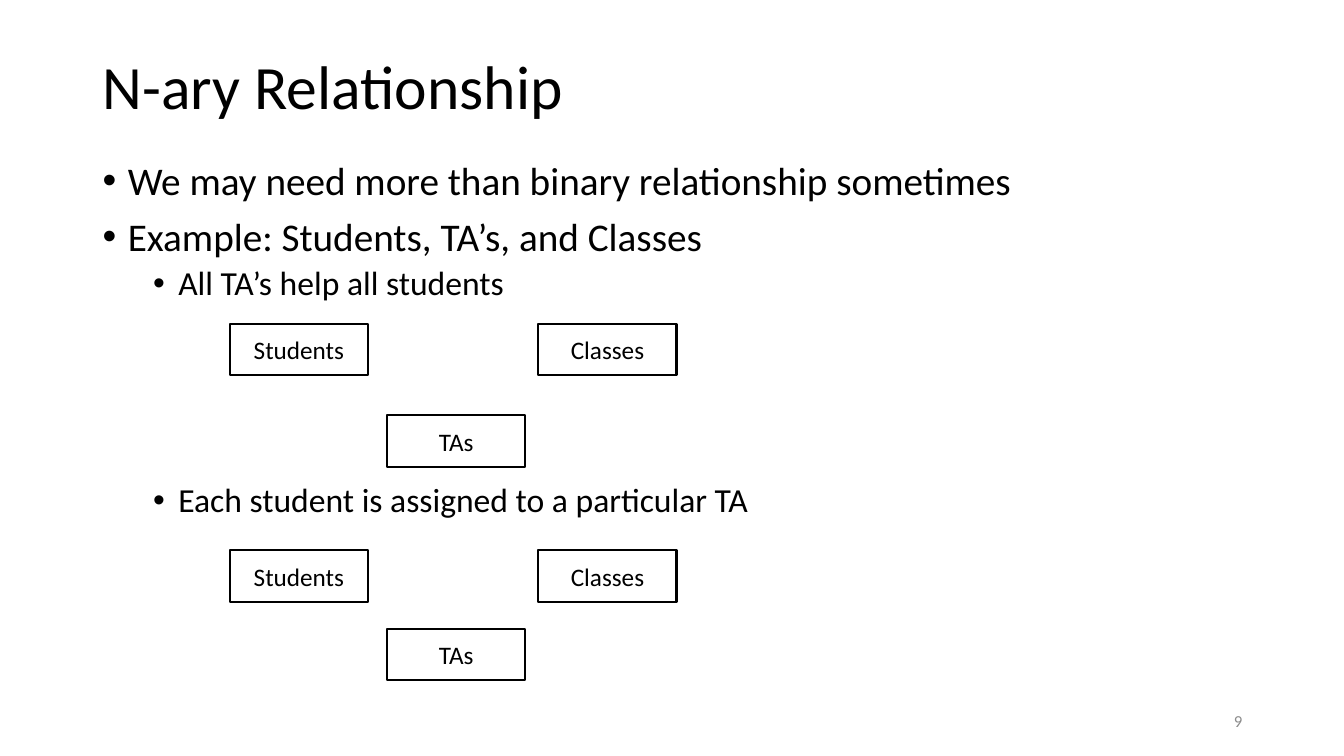
import pptx
import pptx.util
import pptx.dml.color
import pptx.enum.shapes
import pptx.enum.text
import pptx.oxml
import pptx.oxml.ns
from pptx.util import Inches, Pt

# Content
TITLE = "N-ary Relationship"
PAGE = "9"
# Text, level, space before in points (the last leaves room for a diagram)
BULLETS = [
    ("We may need more than binary relationship sometimes", 0, 10),
    ("Example: Students, TA’s, and Classes", 0, 10),
    ("All TA’s help all students", 1, 5),
    ("Each student is assigned to a particular TA", 1, 129),
]
# Entity name, left edge, whether it sits on the lower row
ENTITIES = [("Students", 2.28, False), ("Classes", 5.34, False), ("TAs", 3.84, True)]
# Tops of the upper and lower row of each diagram
DIAGRAMS = [(3.21, 4.12), (5.46, 6.24)]
ENTITY_SIZE = (1.37, 0.51)

THEME = {
    "font": "Calibri",
    "ink": "000000",
    "muted": "8C8C8C",
    "title": 44,
    "levels": (28, 24),
    "entity": 18,
    "page": 12,
}
ALIGN = pptx.enum.text.PP_ALIGN


def rgb(name):
    return pptx.dml.color.RGBColor.from_string(THEME[name])


def style(p, size, color="ink", align=ALIGN.LEFT):
    p.font.name = THEME["font"]
    p.font.size = Pt(size)
    p.font.color.rgb = rgb(color)
    p.alignment = align


def add_bullet(p, level):
    pPr = p._p.get_or_add_pPr()
    pPr.set("marL", str(Inches(0.25 + 0.5 * level)))
    pPr.set("indent", str(Inches(-0.25)))
    for tag, key, value in (("a:buFont", "typeface", "Arial"), ("a:buChar", "char", "•")):
        mark = pptx.oxml.ns.qn(tag)
        bullet = pPr.makeelement(mark, {key: value})
        pPr.insert_element_before(bullet, "a:tabLst", "a:defRPr", "a:extLst")


def add_text(slide, *box):
    tf = slide.shapes.add_textbox(*map(Inches, box)).text_frame
    tf.word_wrap = True
    return tf


def add_entity(slide, name, left, top):
    sp = slide.shapes.add_shape(
        pptx.enum.shapes.MSO_SHAPE.RECTANGLE, *map(Inches, (left, top, *ENTITY_SIZE)))
    sp.shadow.inherit = False
    sp.fill.background()
    sp.line.color.rgb = rgb("ink")
    sp.line.width = Pt(1.5)
    tf = sp.text_frame
    tf.text = name
    tf.vertical_anchor = pptx.enum.text.MSO_ANCHOR.MIDDLE
    style(tf.paragraphs[0], THEME["entity"], align=ALIGN.CENTER)


def main():
    prs = pptx.Presentation()
    prs.slide_width, prs.slide_height = Inches(13.33), Inches(7.5)
    slide = prs.slides.add_slide(prs.slide_layouts[5])

    # Title
    title = slide.shapes.title
    title.left, title.top, title.width, title.height = map(Inches, (0.92, 0.4, 11.5, 0.97))
    tf = title.text_frame
    tf.text = TITLE
    tf.auto_size = pptx.enum.text.MSO_AUTO_SIZE.NONE
    tf.vertical_anchor = pptx.enum.text.MSO_ANCHOR.MIDDLE
    style(tf.paragraphs[0], THEME["title"])
    tf.paragraphs[0].line_spacing = 0.9

    # Bullets
    tf = add_text(slide, 0.92, 1.55, 11.5, 5.21)
    for i, (text, level, before) in enumerate(BULLETS):
        p = tf.add_paragraph() if i else tf.paragraphs[0]
        p.text = text
        p.level = level
        p.line_spacing = 0.9
        p.space_before = Pt(before)
        style(p, THEME["levels"][level])
        add_bullet(p, level)

    # Entity diagrams
    for rows in DIAGRAMS:
        for name, left, lower in ENTITIES:
            add_entity(slide, name, left, rows[lower])

    # Page number
    tf = add_text(slide, 9.42, 6.95, 3, 0.4)
    tf.text = PAGE
    tf.vertical_anchor = pptx.enum.text.MSO_ANCHOR.MIDDLE
    style(tf.paragraphs[0], THEME["page"], "muted", ALIGN.RIGHT)

    prs.save("out.pptx")


if __name__ == "__main__":
    main()
